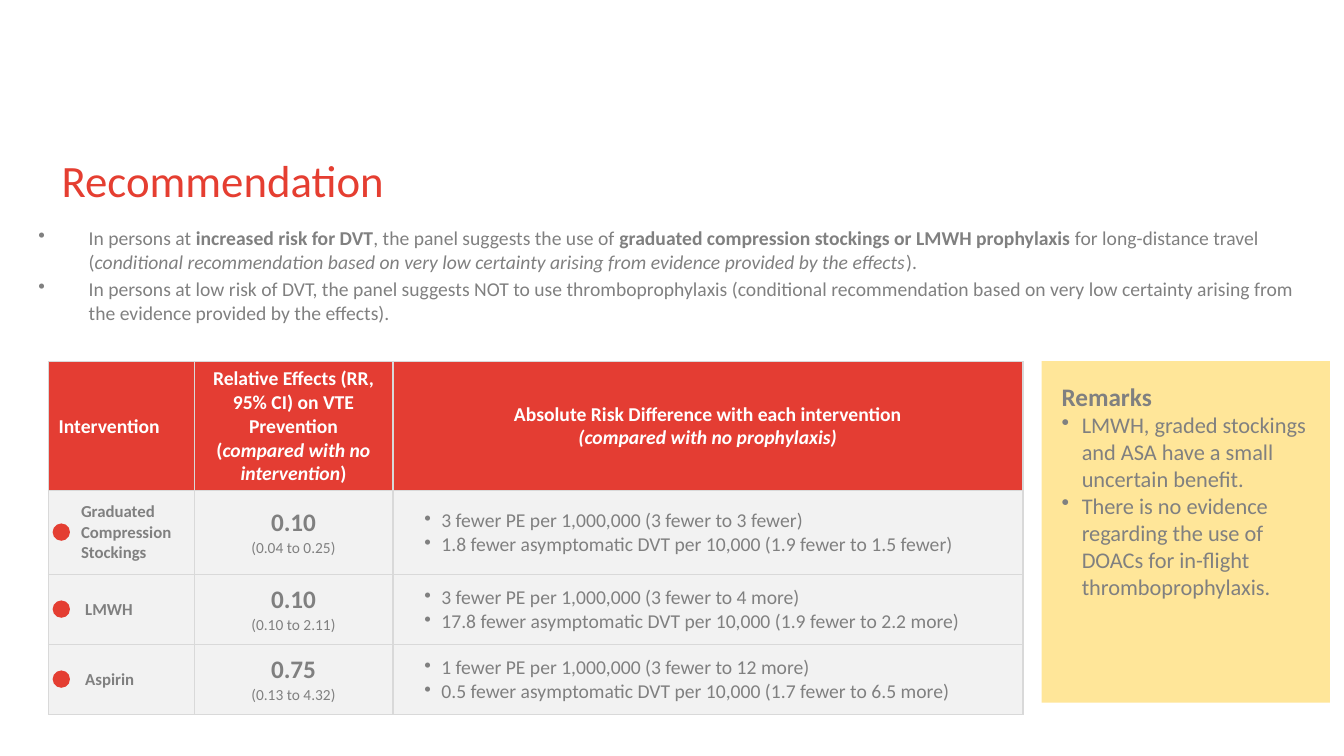
from lxml.etree import SubElement as Sub
from pptx import Presentation
from pptx.dml.color import RGBColor
from pptx.enum.shapes import MSO_SHAPE as Kind
from pptx.enum.text import MSO_ANCHOR as Anchor, PP_ALIGN as Align
from pptx.oxml.ns import qn
from pptx.util import Pt

RED, HEAD, DOT = "E53E31", "E43D33", "E43E32"
GREY, PALE, RULE = "808080", "F2F2F2", "D9D9D9"
YELLOW, WHITE = "FFE699", "FFFFFF"


def color(code):
    return RGBColor.from_string(code)


class Page:
    """Holds the style and the current slide."""
    font = "Calibri"

    def __init__(self, deck):
        self.slide = deck.slides.add_slide(deck.slide_layouts[5])
        self.shapes = self.slide.shapes

    def frame(self, box, pad, anchor=Anchor.TOP):
        text = box.text_frame
        text.word_wrap = True
        text.vertical_anchor = anchor
        (text.margin_left, text.margin_top,
         text.margin_right, text.margin_bottom) = map(Pt, pad)
        return text

    def para(self, text, runs, size, ink=GREY, first=False, align=Align.LEFT,
             left=0, hang=0, gap=0):
        """Adds a paragraph; runs are (words, marks), marks from "b" and "i"."""
        par = text.paragraphs[0] if first else text.add_paragraph()
        props = par._p.get_or_add_pPr()
        props.set("marL", str(Pt(left)))
        props.set("indent", str(Pt(-hang)))
        if hang:
            Sub(props, qn("a:buChar"), char="•")
        par.alignment = align
        par.space_before = Pt(0 if first else gap)
        for words, marks in runs:
            for row, line in enumerate(words.split("\n")):
                if row:
                    par.add_line_break()
                if not line:
                    continue
                run = par.add_run()
                run.text = line
                font = run.font
                font.name, font.size = self.font, Pt(size)
                font.color.rgb = color(ink)
                font.bold, font.italic = "b" in marks, "i" in marks

    def title(self, words, x, y, w, h):
        box = self.shapes.title
        box.left, box.top, box.width, box.height = map(Pt, (x, y, w, h))
        text = self.frame(box, (0, 0, 0, 0))
        self.para(text, [(words, "")], 32, RED, first=True)

    def text(self, x, y, w, h):
        box = self.shapes.add_textbox(*map(Pt, (x, y, w, h)))
        return self.frame(box, (0, 0, 0, 0))

    def shape(self, kind, fill, x, y, w, h):
        item = self.shapes.add_shape(kind, *map(Pt, (x, y, w, h)))
        item.shadow.inherit = False
        item.fill.solid()
        item.fill.fore_color.rgb = color(fill)
        item.line.fill.background()
        return item

    def table(self, x, y, cols, rows):
        grid = self.shapes.add_table(
            len(rows), len(cols), *map(Pt, (x, y, sum(cols), sum(rows)))).table
        for col, wide in zip(grid.columns, cols):
            col.width = Pt(wide)
        for row, high in zip(grid.rows, rows):
            row.height = Pt(high)
        return grid

    def cell(self, cell, fill):
        props = cell._tc.get_or_add_tcPr()
        for side in "LRTB":
            line = Sub(props, qn(f"a:ln{side}"), w=str(Pt(1)))
            Sub(Sub(line, qn("a:solidFill")), qn("a:srgbClr"), val=RULE)
        cell.fill.solid()
        cell.fill.fore_color.rgb = color(fill)
        cell.vertical_anchor = Anchor.MIDDLE
        return cell.text_frame


def main():
    deck = Presentation()
    deck.slide_width, deck.slide_height = Pt(960), Pt(540)
    page = Page(deck)

    # Remarks
    box = page.shape(Kind.RECTANGLE, YELLOW, 744, 258, 206, 244)
    text = page.frame(box, (7.2, 14.4, 7.2, 3.6))
    page.para(text, [("Remarks", "b")], 18, first=True, left=7.2)
    for note in (
            "LMWH, graded stockings and ASA have a small uncertain benefit.",
            "There is no evidence regarding the use of DOACs for in-flight "
            "thromboprophylaxis."):
        page.para(text, [(note, "")], 16, left=21.6, hang=14.4)

    # Title and advice
    page.title("Recommendation", 44, 109, 282, 33)
    text = page.text(27.4, 161.5, 905, 77)
    advice = (
        [("In persons at ", ""), ("increased risk for DVT", "b"),
         (", the panel suggests the use of ", ""),
         ("graduated compression stockings or LMWH prophylaxis", "b"),
         (" for long-distance travel (", ""),
         ("conditional recommendation based on very low certainty arising "
          "from evidence provided by the effects", "i"), (").", "")],
        [("In persons at low risk of DVT, the panel suggests NOT to use "
          "thromboprophylaxis (conditional recommendation based on very low "
          "certainty arising from the evidence provided by the effects).", "")])
    for num, runs in enumerate(advice):
        page.para(text, runs, 14, first=num == 0, left=36, hang=36, gap=2.8)

    # Table head
    top, highs = 258.5, (92, 60, 50, 50)
    grid = page.table(34.7, top, (104, 142, 450), highs)
    heads = (
        [("Intervention", "b")],
        [("Relative Effects (RR, 95% CI) on VTE Prevention (", "b"),
         ("compared with no intervention", "bi"), (")", "b")],
        [("Absolute Risk Difference with each intervention\n", "b"),
         ("(compared with no prophylaxis)", "bi")])
    for col, runs in enumerate(heads):
        text = page.cell(grid.cell(0, col), HEAD)
        page.para(text, runs, 14, WHITE, first=True,
                  align=Align.CENTER if col else Align.LEFT)

    # Table rows, each with its dot
    data = (
        ("Graduated\nCompression\nStockings", 16, "0.10", "(0.04 to 0.25)",
         "3 fewer PE per 1,000,000 (3 fewer to 3 fewer)",
         "1.8 fewer asymptomatic DVT per 10,000 (1.9 fewer to 1.5 fewer)"),
        ("LMWH", 19, "0.10", "(0.10 to 2.11)",
         "3 fewer PE per 1,000,000 (3 fewer to 4 more)",
         "17.8 fewer asymptomatic DVT per 10,000 (1.9 fewer to 2.2 more)"),
        ("Aspirin", 19, "0.75", "(0.13 to 4.32)",
         "1 fewer PE per 1,000,000 (3 fewer to 12 more)",
         "0.5 fewer asymptomatic DVT per 10,000 (1.7 fewer to 6.5 more)"))
    for row, (name, left, ratio, span, *risks) in enumerate(data, 1):
        cells = [page.cell(grid.cell(row, col), PALE) for col in range(3)]
        page.para(cells[0], [(name, "b")], 12, first=True, left=left)
        page.para(cells[1], [(ratio, "b")], 18, first=True, align=Align.CENTER)
        page.para(cells[1], [(span, "")], 11, align=Align.CENTER)
        for num, risk in enumerate(risks):
            page.para(cells[2], [(risk, "")], 14, first=num == 0,
                      left=27.4, hang=12.2)
        mid = top + sum(highs[:row]) + highs[row] / 2
        page.shape(Kind.OVAL, DOT, 37.6, mid - 6.6, 12.4, 12.4)

    deck.save("out.pptx")


if __name__ == "__main__":
    main()
